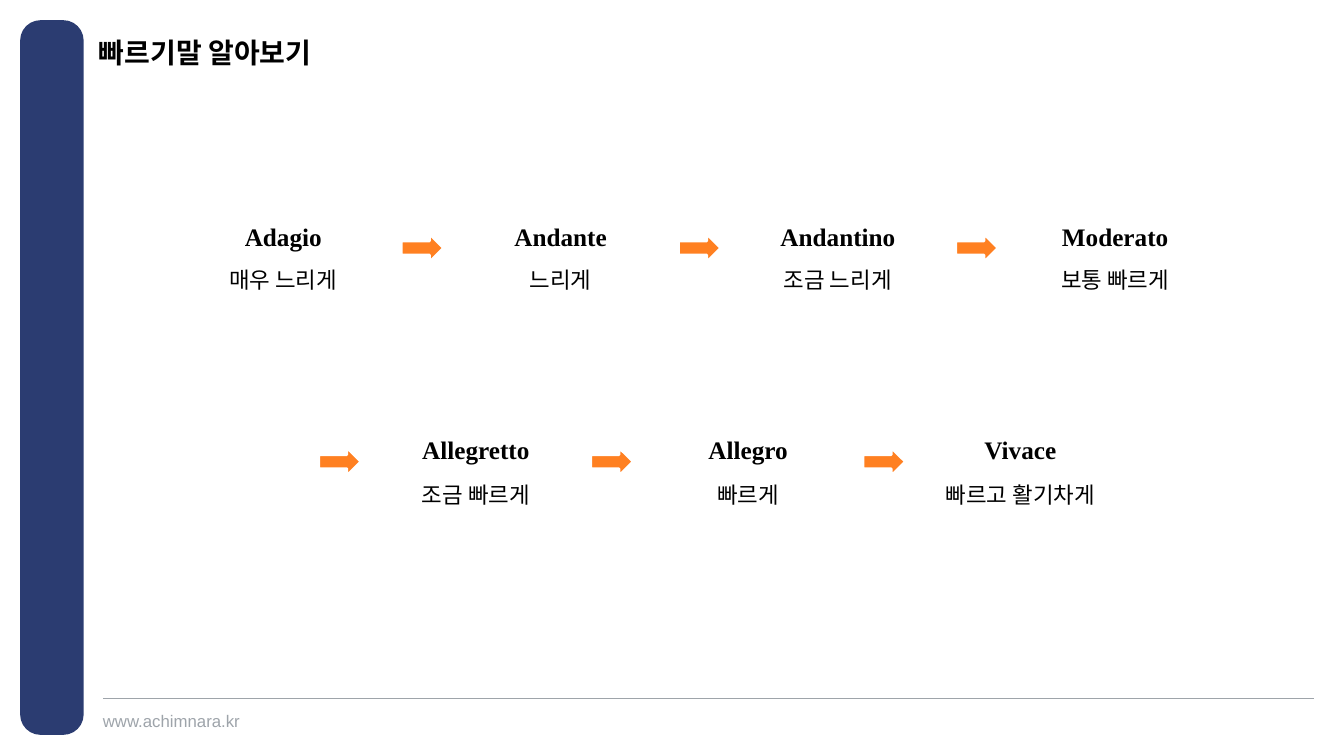
from lxml import etree
from pptx import Presentation
from pptx import util as u
from pptx.dml.color import RGBColor
from pptx.enum import shapes, text
from pptx.oxml.ns import qn

COLORS = {"navy": "2B3C71", "orange": "FF8021", "gray": "9EA4AA",
          "black": "000000", "white": "FFFFFF"}
SANS, SERIF = "Arial", "Times New Roman"


def rgb(name):
    return RGBColor.from_string(COLORS[name])


class SlideBuilder:
    def __init__(self, slide):
        self.slide = slide

    def shape(self, kind, left, top, width, height, fill, border=None):
        item = self.slide.shapes.add_shape(kind, *map(u.Inches, (left, top, width, height)))
        item.shadow.inherit = False
        item.fill.solid()
        item.fill.fore_color.rgb = rgb(fill)
        if border:
            item.line.color.rgb = rgb(border)
            item.line.width = u.Pt(2)
        else:
            item.line.fill.background()
        return item

    def rule(self, x1, y1, x2, y2, color):
        line = self.slide.shapes.add_connector(
            shapes.MSO_CONNECTOR.STRAIGHT, *map(u.Inches, (x1, y1, x2, y2)))
        line.line.color.rgb = rgb(color)
        line.line.width = u.Pt(0.5)
        etree.SubElement(line._element.spPr, qn("a:effectLst"))

    def label(self, words, left, top, width, height, size, font=SANS, color="black",
              bold=False, spacing=1.0, parent=None):
        owner = parent or self.slide
        box = owner.shapes.add_textbox(*map(u.Inches, (left, top, width, height)))
        frame = box.text_frame
        frame.word_wrap = True
        frame.text = words
        paragraph = frame.paragraphs[0]
        paragraph.line_spacing = spacing
        style = paragraph.runs[0].font
        style.name, style.size, style.bold = font, u.Pt(size), bold
        style.color.rgb = rgb(color)
        if parent:
            paragraph.alignment = text.PP_ALIGN.CENTER
            frame.auto_size = text.MSO_AUTO_SIZE.SHAPE_TO_FIT_TEXT
        else:
            frame.margin_left = frame.margin_right = 0
            frame.margin_top = frame.margin_bottom = 0

    def tempo(self, term, meaning, center, term_top, meaning_top, term_width):
        group = self.slide.shapes.add_group_shape()
        self.label(term, center - term_width / 2, term_top, term_width, 0.5, 18,
                   font=SERIF, bold=True, spacing=1.5, parent=group)
        self.label(meaning, center - 0.95, meaning_top, 1.9, 0.46, 16,
                   spacing=1.5, parent=group)

    def arrow(self, left, top):
        self.shape(shapes.MSO_SHAPE.RIGHT_ARROW, left, top, 0.42, 0.28, "orange", "white")


def main():
    deck = Presentation()
    deck.slide_width, deck.slide_height = u.Inches(13.33), u.Inches(7.5)
    page = SlideBuilder(deck.slides.add_slide(deck.slide_layouts[6]))

    # Side bar and footer
    sidebar = page.shape(shapes.MSO_SHAPE.ROUNDED_RECTANGLE, 0.2, 0.2, 0.63, 7.09, "navy")
    sidebar.adjustments[0] = 0.32
    page.rule(13.03, 6.93, 1.02, 6.93, "gray")
    page.label("www.achimnara.kr", 1.02, 7.05, 1.5, 0.2, 12, color="gray")

    # Title
    page.label("빠르기말 알아보기", 0.98, 0.39, 7.87, 0.28, 20, bold=True, spacing=0.9)

    # Tempo rows: first center, pitch, first arrow, tops of arrow, term and meaning
    slow = [("Adagio", "매우 느리게", 1.25), ("Andante", "느리게", 1.25),
            ("Andantino", "조금 느리게", 1.52), ("Moderato", "보통 빠르게", 1.62)]
    fast = [("Allegretto", "조금 빠르게", 1.36), ("Allegro", "빠르게", 1.25),
            ("Vivace", "빠르고 활기차게", 1.25)]
    rows = [(slow, 2.81, 2.75, 1.23, 2.32, 2.0, 2.46),
            (fast, 4.72, 2.7, 3.16, 4.44, 4.11, 4.59)]
    for tempos, center, pitch, arrow_left, arrow_top, term_top, meaning_top in rows:
        for i, (term, meaning, term_width) in enumerate(tempos):
            # Every tempo but the slowest follows an arrow
            if term != "Adagio":
                page.arrow(arrow_left + i * pitch, arrow_top)
            page.tempo(term, meaning, center + i * pitch, term_top, meaning_top, term_width)

    deck.save("out.pptx")


if __name__ == "__main__":
    main()
